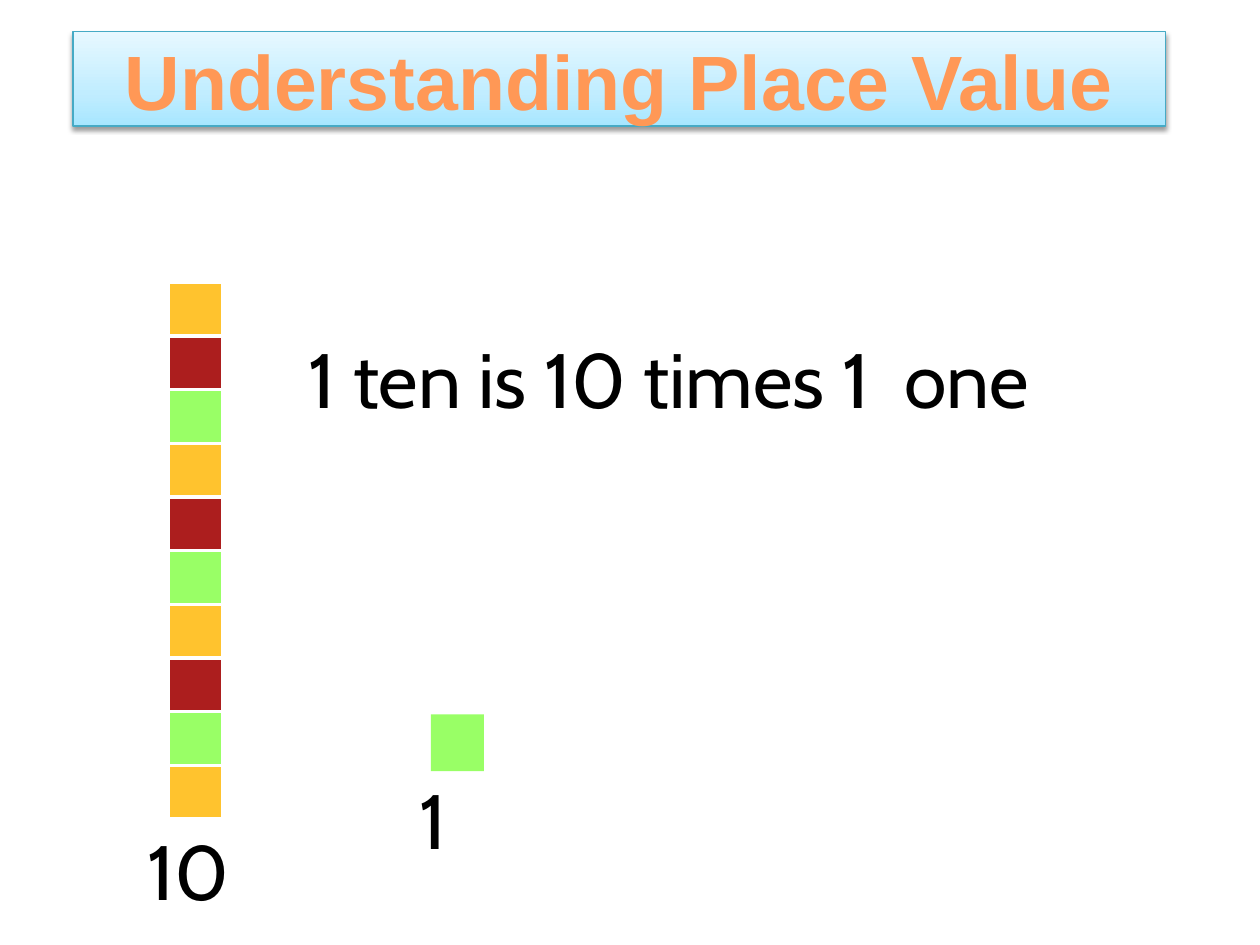
from copy import deepcopy
from dataclasses import dataclass
from itertools import cycle, islice

from lxml import etree
from pptx import Presentation
from pptx.dml.color import RGBColor
from pptx.enum.shapes import MSO_SHAPE
from pptx.enum.text import MSO_ANCHOR, MSO_AUTO_SIZE, PP_ALIGN
from pptx.oxml import parse_xml
from pptx.oxml.ns import nsdecls, qn
from pptx.util import Inches, Pt

RECT = MSO_SHAPE.RECTANGLE
TOP, MIDDLE = MSO_ANCHOR.TOP, MSO_ANCHOR.MIDDLE
LEFT, CENTER = PP_ALIGN.LEFT, PP_ALIGN.CENTER
GROW = MSO_AUTO_SIZE.SHAPE_TO_FIT_TEXT


@dataclass(frozen=True)
class Theme:
    text: str = "000000"
    heading: str = "FF9856"
    amber: str = "FFC32E"
    red: str = "AC1E1E"
    green: str = "99FF66"
    gap: str = "FFFFFF"
    banner_line: str = "46AAC5"
    banner_stops: tuple = ((0, "A7E6FF"), (0.35, "C1EDFF"), (1, "E7F8FF"))
    font: str = "Cabin"
    heading_font: str = "Arial"
    size: float = 44
    gap_width: float = 2.25


@dataclass(frozen=True)
class Box:
    left: float
    top: float
    width: float
    height: float

    def lengths(self) -> tuple:
        return tuple(Inches(v) for v in (self.left, self.top, self.width, self.height))


@dataclass(frozen=True)
class Label:
    text: str
    box: Box


THEME = Theme()
BANNER = Label("Understanding Place Value", Box(0.58, 0.25, 8.67, 0.75))
STATEMENT = Label("1 ten is 10 times 1  one", Box(1.83, 2.62, 6.96, 0.75))
COUNTS = (Label("10", Box(1.17, 6.53, 1.31, 0.75)),
          Label("1", Box(3.33, 6.12, 0.36, 0.76)))
TEN_BAR = Box(1.35, 2.24, 0.4, 4.26)
ONE_BLOCK = Box(3.42, 5.67, 0.42, 0.45)
TEN = 10


def write(s, text: str, align=LEFT, anchor=TOP, font: str = THEME.font,
          color: str = THEME.text, bold: bool = False) -> None:
    tf = s.text_frame
    tf.text = text
    tf.word_wrap = True
    tf.auto_size = GROW
    tf.vertical_anchor = anchor
    tf.margin_left = tf.margin_right = tf.margin_bottom = 0
    tf.margin_top = Inches(0.01)
    p = tf.paragraphs[0]
    p.alignment = align
    p.space_before = Pt(1)
    r = p.runs[0]
    r.font.name = font
    r.font.size = Pt(THEME.size)
    r.font.bold = bold
    r.font.color.rgb = RGBColor.from_string(color)


def add_block(slide, box: Box, color: str) -> None:
    sp = slide.shapes.add_shape(RECT, *box.lengths())
    sp.shadow.inherit = False
    sp.fill.solid()
    sp.fill.fore_color.rgb = RGBColor.from_string(color)
    sp.line.fill.background()


def add_banner(slide, label: Label) -> None:
    sp = slide.shapes.add_shape(RECT, *label.box.lengths())
    sp.fill.gradient()
    sp.fill.gradient_angle = 90
    stops = sp._element.spPr.find(".//" + qn("a:gsLst"))
    stops.insert(1, deepcopy(stops[0]))
    for stop, (position, color) in zip(sp.fill.gradient_stops, THEME.banner_stops):
        stop.position = position
        stop.color.rgb = RGBColor.from_string(color)
    sp.line.color.rgb = RGBColor.from_string(THEME.banner_line)
    sp.line.width = Pt(0.75)
    sp._element.spPr.append(parse_xml(
        f'<a:effectLst {nsdecls("a")}><a:outerShdw blurRad="{Pt(3.1)}" dist="{Pt(1.6)}" '
        'dir="5400000" rotWithShape="0"><a:srgbClr val="000000"><a:alpha val="38000"/>'
        '</a:srgbClr></a:outerShdw></a:effectLst>'))
    write(sp, label.text, CENTER, MIDDLE, THEME.heading_font, THEME.heading, True)


def set_borders(cell) -> None:
    """Draw gap lines above and below the cell and none at its sides."""
    tc_pr = cell._tc.get_or_add_tcPr()
    for i, side in enumerate(("lnL", "lnR", "lnT", "lnB")):
        ln = etree.Element(qn("a:" + side), w=str(Pt(THEME.gap_width)))
        if side in ("lnL", "lnR"):
            etree.SubElement(ln, qn("a:noFill"))
        else:
            fill = etree.SubElement(ln, qn("a:solidFill"))
            etree.SubElement(fill, qn("a:srgbClr"), val=THEME.gap)
        tc_pr.insert(i, ln)


def add_ten_bar(slide, box: Box) -> None:
    table = slide.shapes.add_table(TEN, 1, *box.lengths()).table
    table.first_row = table.horz_banding = False
    colors = islice(cycle((THEME.amber, THEME.red, THEME.green)), TEN)
    for row, color in zip(table.rows, colors):
        row.height = Inches(box.height / TEN)
        cell = row.cells[0]
        cell.margin_left = cell.margin_right = cell.margin_top = cell.margin_bottom = 0
        cell.fill.solid()
        cell.fill.fore_color.rgb = RGBColor.from_string(color)
        set_borders(cell)


def main() -> None:
    prs = Presentation()
    prs.slide_width, prs.slide_height = Inches(10), Inches(7.5)
    slide = prs.slides.add_slide(prs.slide_layouts.get_by_name("Title Only"))

    title = slide.shapes.title
    title.left, title.top, title.width, title.height = STATEMENT.box.lengths()
    write(title, STATEMENT.text, CENTER, MIDDLE)

    add_block(slide, ONE_BLOCK, THEME.green)
    add_ten_bar(slide, TEN_BAR)
    for label in COUNTS:
        write(slide.shapes.add_textbox(*label.box.lengths()), label.text)
    add_banner(slide, BANNER)
    prs.save("out.pptx")


if __name__ == "__main__":
    main()
